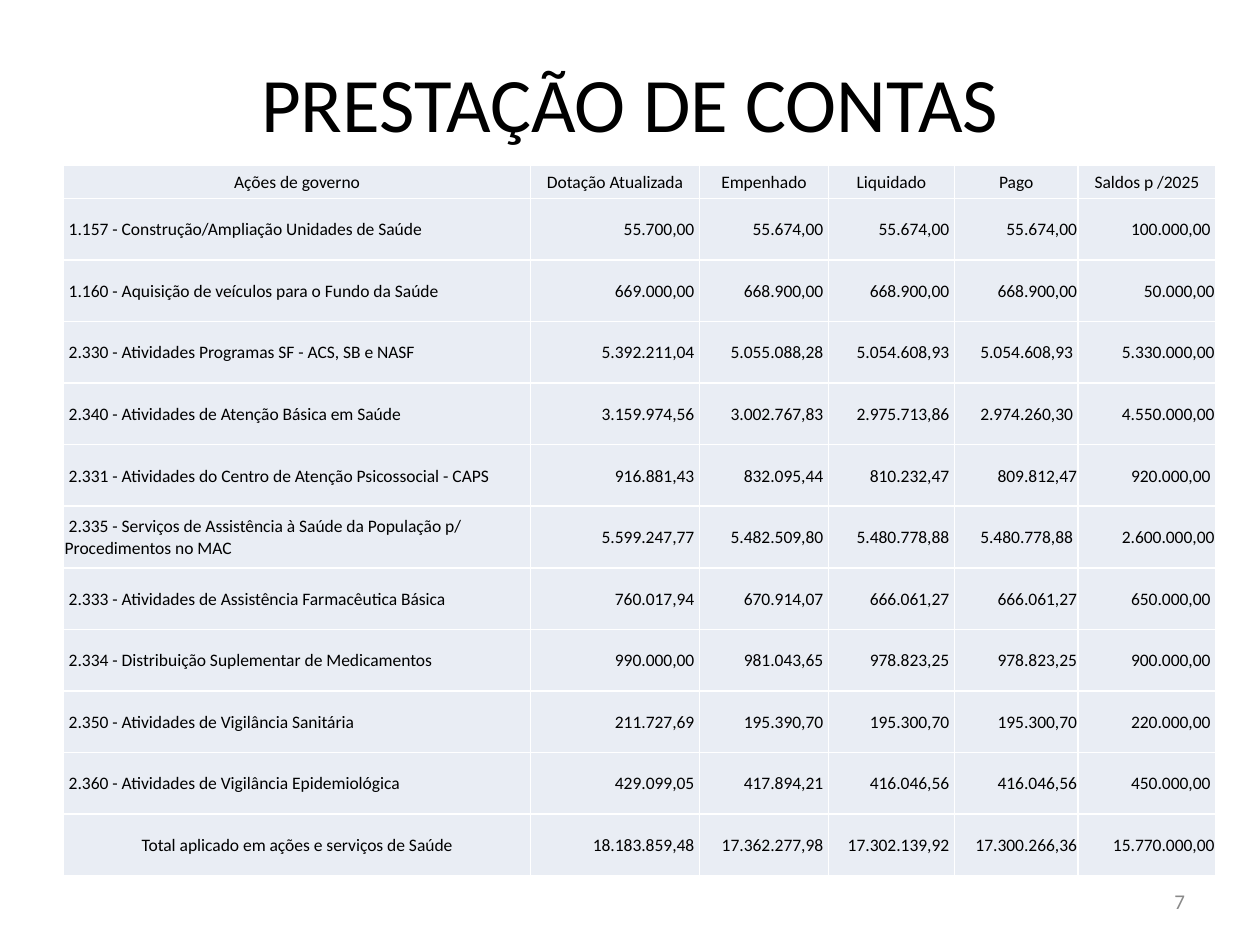
from lxml import etree
from pptx import Presentation
from pptx.dml.color import RGBColor
from pptx.enum.text import MSO_ANCHOR, PP_ALIGN
from pptx.oxml.ns import qn
from pptx.util import Pt

LEFT, CENTER, RIGHT = PP_ALIGN.LEFT, PP_ALIGN.CENTER, PP_ALIGN.RIGHT
MIDDLE = MSO_ANCHOR.MIDDLE

COLORS = {"text": "000000", "number": "898989", "cell": "E9EDF4", "white": "FFFFFF"}

HEADERS = ["Ações de governo", "Dotação Atualizada", "Empenhado", "Liquidado", "Pago",
           "Saldos p /2025"]
ACTIONS = [
    ("1.157 - Construção/Ampliação Unidades de Saúde",
     "55.700,00", "55.674,00", "55.674,00", "55.674,00", "100.000,00"),
    ("1.160 - Aquisição de veículos para o Fundo da Saúde",
     "669.000,00", "668.900,00", "668.900,00", "668.900,00", "50.000,00"),
    ("2.330 - Atividades Programas SF - ACS, SB e NASF",
     "5.392.211,04", "5.055.088,28", "5.054.608,93", "5.054.608,93", "5.330.000,00"),
    ("2.340 - Atividades de Atenção Básica em Saúde",
     "3.159.974,56", "3.002.767,83", "2.975.713,86", "2.974.260,30", "4.550.000,00"),
    ("2.331 - Atividades do Centro de Atenção Psicossocial - CAPS",
     "916.881,43", "832.095,44", "810.232,47", "809.812,47", "920.000,00"),
    ("2.335 - Serviços de Assistência à Saúde da População p/ Procedimentos no MAC",
     "5.599.247,77", "5.482.509,80", "5.480.778,88", "5.480.778,88", "2.600.000,00"),
    ("2.333 - Atividades de Assistência Farmacêutica Básica",
     "760.017,94", "670.914,07", "666.061,27", "666.061,27", "650.000,00"),
    ("2.334 - Distribuição Suplementar de Medicamentos",
     "990.000,00", "981.043,65", "978.823,25", "978.823,25", "900.000,00"),
    ("2.350 - Atividades de Vigilância Sanitária",
     "211.727,69", "195.390,70", "195.300,70", "195.300,70", "220.000,00"),
    ("2.360 - Atividades de Vigilância Epidemiológica",
     "429.099,05", "417.894,21", "416.046,56", "416.046,56", "450.000,00"),
]
TOTAL = ("Total aplicado em ações e serviços de Saúde",
         "18.183.859,48", "17.362.277,98", "17.302.139,92", "17.300.266,36", "15.770.000,00")

COLUMN_WIDTHS = [266.8, 96.6, 73.7, 72, 70.7, 78.6]
HEADER_HEIGHT, ROW_HEIGHT = 18.9, 35.2
INSET, NUMBER_INSET = 0.7, 3
# In the last two columns only values of this length keep the wider right inset
INSET_LENGTHS = {4: len("0.000.000,00"), 5: len("000.000,00")}


def write_text(frame, text, font="Calibri", size=10, color="text", align=LEFT):
    paragraph = frame.paragraphs[0]
    paragraph.alignment = align
    run = paragraph.add_run()
    run.text = text
    run.font.name = font
    run.font.size = Pt(size)
    run.font.color.rgb = RGBColor.from_string(COLORS[color])


class SlideBuilder:
    def __init__(self, slide, font="Calibri"):
        self.slide = slide
        self.font = font

    def text_box(self, text, left, top, width, height, fill=None, **text_format):
        shape = self.slide.shapes.add_textbox(Pt(left), Pt(top), Pt(width), Pt(height))
        if fill:
            shape.fill.solid()
            shape.fill.fore_color.rgb = RGBColor.from_string(COLORS[fill])
        shape.text_frame.word_wrap = True
        shape.text_frame.vertical_anchor = MIDDLE
        write_text(shape.text_frame, text, font=self.font, **text_format)

    def table(self, rows, left, top, widths, heights):
        table = self.slide.shapes.add_table(
            len(rows), len(widths), Pt(left), Pt(top), Pt(sum(widths)), Pt(sum(heights))).table
        for column, width in zip(table.columns, widths):
            column.width = Pt(width)
        for row, height in zip(table.rows, heights):
            row.height = Pt(height)
        for row_index, values in enumerate(rows):
            centered_label = row_index in (0, len(rows) - 1)
            for column_index, value in enumerate(values):
                cell = table.cell(row_index, column_index)
                if row_index == 0 or (column_index == 0 and centered_label):
                    self.cell(cell, value, CENTER)
                elif column_index == 0:
                    self.cell(cell, f" {value}", LEFT)
                else:
                    inset_length = INSET_LENGTHS.get(column_index, len(value))
                    inset = NUMBER_INSET if len(value) == inset_length else INSET
                    self.cell(cell, value, RIGHT, inset)

    def cell(self, cell, text, align, right_inset=INSET):
        cell.margin_left = cell.margin_top = Pt(INSET)
        cell.margin_right, cell.margin_bottom = Pt(right_inset), Pt(0)
        cell.vertical_anchor = MIDDLE
        write_text(cell.text_frame, text, font=self.font, align=align)
        self.borders(cell)
        cell.fill.solid()
        cell.fill.fore_color.rgb = RGBColor.from_string(COLORS["cell"])

    def borders(self, cell):
        properties = cell._tc.get_or_add_tcPr()
        for side in ("lnL", "lnR", "lnT", "lnB"):
            line = etree.SubElement(properties, qn(f"a:{side}"), w=str(Pt(1)))
            fill = etree.SubElement(line, qn("a:solidFill"))
            etree.SubElement(fill, qn("a:srgbClr"), val=COLORS["white"])


def main():
    presentation = Presentation()
    presentation.slide_width, presentation.slide_height = Pt(720), Pt(540)
    builder = SlideBuilder(presentation.slides.add_slide(presentation.slide_layouts[6]))

    # Page number
    builder.text_box("7", 516.25, 500.5, 168, 28.75, size=12, color="number", align=RIGHT)

    # Title
    builder.text_box("PRESTAÇÃO DE CONTAS", 36, 21.6, 648, 72.7, fill="white", size=44,
                     align=CENTER)

    # Accounts by government action
    rows = [HEADERS, *ACTIONS, TOTAL]
    heights = [HEADER_HEIGHT] + [ROW_HEIGHT] * (len(rows) - 1)
    builder.table(rows, 36.3, 94.5, COLUMN_WIDTHS, heights)

    presentation.save("out.pptx")


if __name__ == "__main__":
    main()
